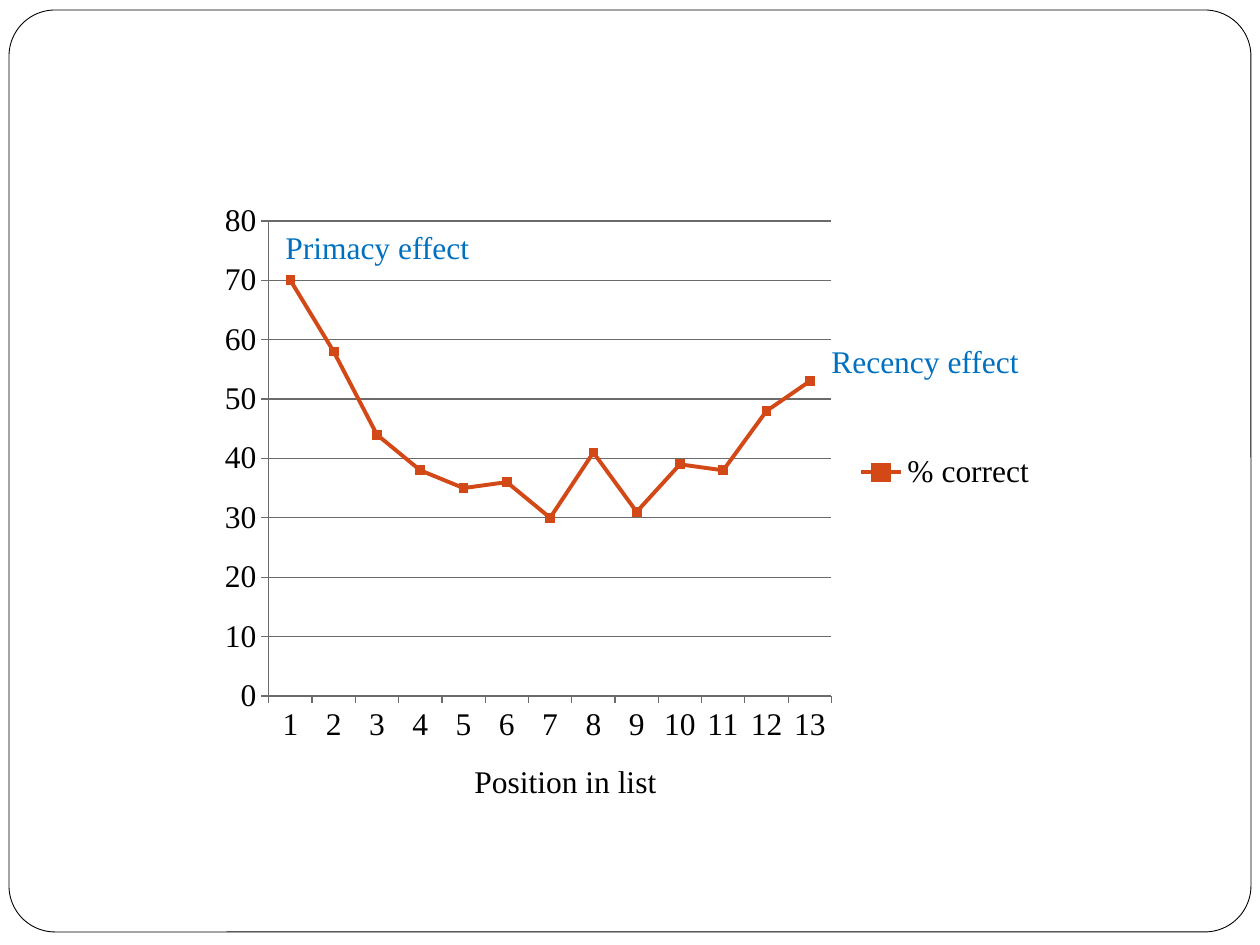
from lxml import etree
from pptx import Presentation
from pptx.chart.data import CategoryChartData
from pptx.dml.color import RGBColor
from pptx.enum.chart import XL_CHART_TYPE, XL_LEGEND_POSITION, XL_MARKER_STYLE, XL_TICK_MARK
from pptx.enum.shapes import MSO_SHAPE
from pptx.enum.text import MSO_AUTO_SIZE
from pptx.oxml.ns import qn
from pptx.util import Pt

LINE_MARKERS = XL_CHART_TYPE.LINE_MARKERS
LEGEND_RIGHT = XL_LEGEND_POSITION.RIGHT
SQUARE = XL_MARKER_STYLE.SQUARE
TICK_OUT = XL_TICK_MARK.OUTSIDE
ROUNDED = MSO_SHAPE.ROUNDED_RECTANGLE
GROW = MSO_AUTO_SIZE.SHAPE_TO_FIT_TEXT

BLACK = RGBColor(0x00, 0x00, 0x00)
WHITE = RGBColor(0xFF, 0xFF, 0xFF)
BLUE = RGBColor(0x00, 0x70, 0xC0)
ORANGE = RGBColor(0xD3, 0x48, 0x17)
GRAY = RGBColor(0x6B, 0x6B, 0x6B)
FONT = "Times New Roman"
SIZE = Pt(18)
EMU_PER_PX = 914400 / 126
CORRECT = (70, 58, 44, 38, 35, 36, 30, 41, 31, 39, 38, 48, 53)


def px(*lengths):
    """Turn pixel lengths into EMU."""
    return [round(n * EMU_PER_PX) for n in lengths]


def style_font(font, color):
    """Apply the slide's typeface and size in a colour."""
    font.name, font.size = FONT, SIZE
    font.color.rgb = color


def add_frame(s):
    """Draw the rounded border around the slide."""
    sp = s.shapes.add_shape(ROUNDED, *px(9, 10, 1242, 922))
    sp.adjustments[0] = 0.05
    sp.shadow.inherit = False
    sp.fill.solid()
    sp.fill.fore_color.rgb = WHITE
    sp.line.color.rgb = BLACK
    sp.line.width = Pt(0.5)


def add_label(s, text, left, top, color):
    """Add a one-line text label."""
    tf = s.shapes.add_textbox(*px(left, top, 420, 50)).text_frame
    tf.word_wrap = True
    tf.auto_size = GROW
    r = tf.paragraphs[0].add_run()
    r.text = text
    style_font(r.font, color)


def set_plot_layout(chart, **fractions):
    """Fix the inner plot area as fractions of the chart."""
    area = chart.plots[0]._element.getparent()
    layout = area.find(qn("c:layout"))
    if layout is None:
        layout = etree.Element(qn("c:layout"))
        area.insert(0, layout)
    manual = etree.SubElement(layout, qn("c:manualLayout"))
    values = {"layoutTarget": "inner", "xMode": "edge", "yMode": "edge", **fractions}
    for name, value in values.items():
        etree.SubElement(manual, qn(f"c:{name}")).set("val", str(value))


def style_axis(axis):
    """Give an axis a thin gray line and outside ticks."""
    axis.major_tick_mark = TICK_OUT
    axis.format.line.color.rgb = GRAY
    axis.format.line.width = Pt(0.75)


def add_recall_chart(s):
    """Plot the percentage recalled at each list position."""
    data = CategoryChartData()
    data.categories = [str(n) for n in range(1, len(CORRECT) + 1)]
    data.add_series("% correct", CORRECT)
    chart = s.shapes.add_chart(LINE_MARKERS, *px(210, 193, 840, 559), data).chart
    style_font(chart.font, BLACK)
    chart.has_title = False
    chart.has_legend = True
    chart.legend.position = LEGEND_RIGHT
    chart.legend.include_in_layout = False
    set_plot_layout(chart, x=0.07, y=0.05, w=0.67, h=0.85)

    style_axis(chart.category_axis)
    axis = chart.value_axis
    style_axis(axis)
    axis.minimum_scale, axis.maximum_scale, axis.major_unit = 0, 80, 10
    axis.has_major_gridlines = True
    axis.major_gridlines.format.line.color.rgb = GRAY
    axis.major_gridlines.format.line.width = Pt(0.75)

    plot = chart.plots[0]
    plot.vary_by_categories = False
    series = plot.series[0]
    series.smooth = False
    series.format.line.color.rgb = ORANGE
    series.format.line.width = Pt(2.25)
    series.marker.style = SQUARE
    series.marker.size = 5
    series.marker.format.fill.solid()
    series.marker.format.fill.fore_color.rgb = ORANGE
    series.marker.format.line.color.rgb = ORANGE


def main():
    """Build the serial position slide."""
    prs = Presentation()
    prs.slide_width, prs.slide_height = px(1260, 945)
    s = prs.slides.add_slide(prs.slide_layouts[6])
    add_frame(s)
    add_recall_chart(s)
    add_label(s, "Position in list", 462, 756, BLACK)
    add_label(s, "Primacy effect", 273, 222, BLUE)
    add_label(s, "Recency effect", 819, 336, BLUE)
    prs.save("out.pptx")


if __name__ == "__main__":
    main()
